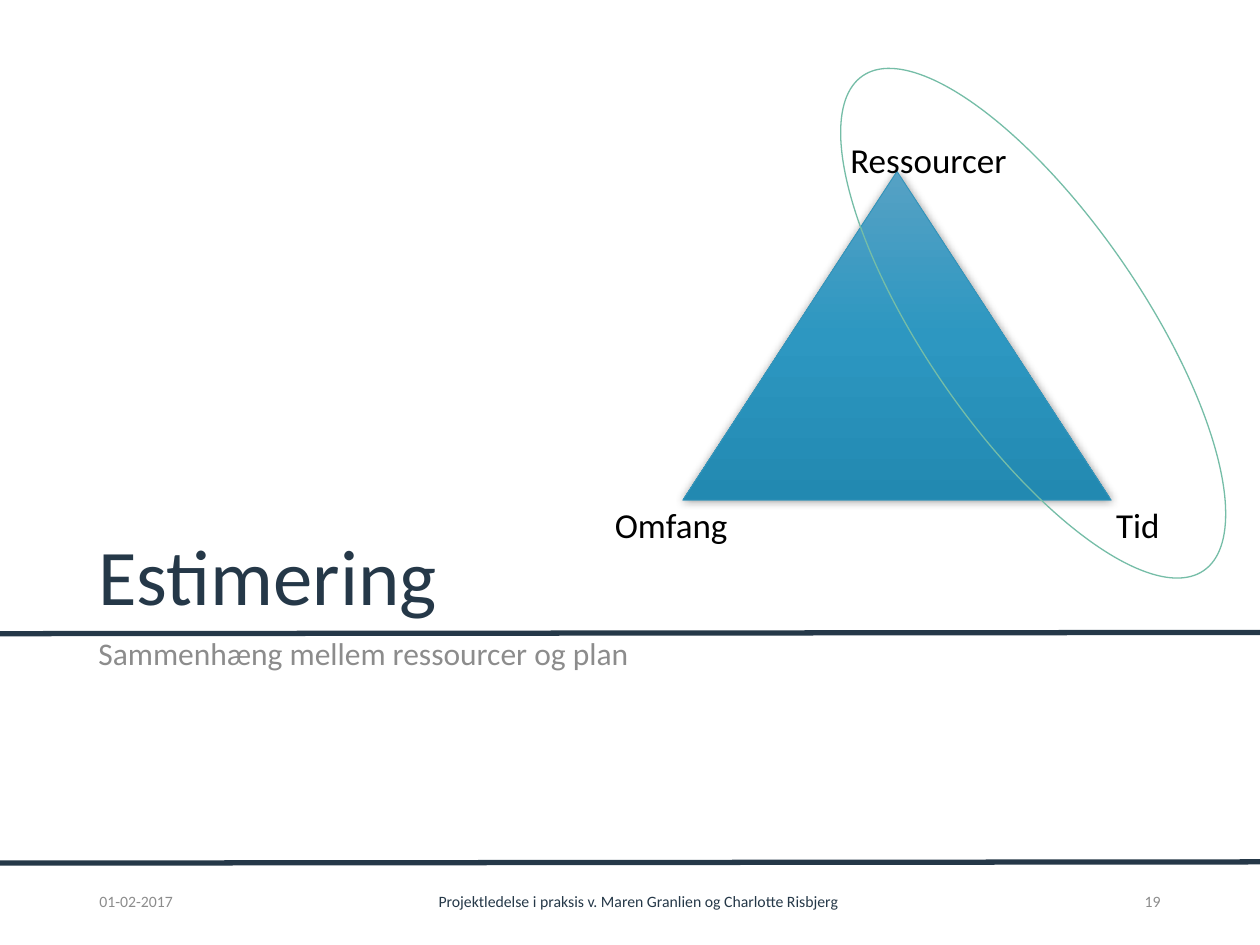
from lxml import etree
from pptx import Presentation
from pptx.dml.color import RGBColor
from pptx.enum.shapes import MSO_CONNECTOR, MSO_SHAPE
from pptx.enum.text import MSO_ANCHOR, PP_ALIGN
from pptx.oxml import parse_xml
from pptx.oxml.ns import nsdecls, qn
from pptx.util import Pt

LEFT, CENTER, RIGHT = PP_ALIGN.LEFT, PP_ALIGN.CENTER, PP_ALIGN.RIGHT
TOP, MIDDLE, BOTTOM = MSO_ANCHOR.TOP, MSO_ANCHOR.MIDDLE, MSO_ANCHOR.BOTTOM
STRAIGHT = MSO_CONNECTOR.STRAIGHT
TRIANGLE, OVAL = MSO_SHAPE.ISOSCELES_TRIANGLE, MSO_SHAPE.OVAL

FONT = "Calibri"
COLORS = {
    "navy": "253848", "grey": "8C8C8C", "black": "000000",
    "edge": "3494BA", "green": "75BDA7",
    "light": "56A1C4", "mid": "2D97C1", "deep": "2289B1",
}


def rgb(name):
    return RGBColor.from_string(COLORS[name])


def set_text(sp, text, size, color, align=LEFT, anchor=TOP):
    tf = sp.text_frame
    tf.text = text
    tf.vertical_anchor = anchor
    p = tf.paragraphs[0]
    p.alignment = align
    p.font.name, p.font.size, p.font.bold = FONT, Pt(size), False
    p.font.color.rgb = rgb(color)
    return p


def add_label(slide, box, text, size, color, align=LEFT, anchor=TOP, wrap=True):
    sp = slide.shapes.add_textbox(*map(Pt, box))
    sp.text_frame.word_wrap = wrap
    set_text(sp, text, size, color, align, anchor)


def add_rule(slide, y):
    """Full-width rule that rises slightly to the right."""
    line = slide.shapes.add_connector(STRAIGHT, 0, Pt(y), Pt(720), Pt(y - 0.7))
    line.line.color.rgb = rgb("navy")
    line.line.width = Pt(3)
    etree.SubElement(line._element.spPr, qn("a:effectLst"))


def add_headings(slide, box):
    """Title above the rule, subtitle below it."""
    x, y, w, h = box
    title_h = 224.6
    title, body = slide.shapes.title, slide.placeholders[1]
    title.left, title.top, title.width, title.height = map(Pt, (x, y, w, title_h))
    body_y = y + title_h + 2.2
    body.left, body.top, body.width, body.height = map(
        Pt, (x, body_y, w, y + h - body_y))

    p = set_text(title, "Estimering", 45, "navy", anchor=BOTTOM)
    p.line_spacing = 0.9
    # The layout sets its title in capitals
    p._p.find(".//" + qn("a:defRPr")).set("cap", "none")

    p = set_text(body, "Sammenhæng mellem ressourcer og plan", 18, "grey")
    p.line_spacing, p.space_before = 0.9, Pt(7.5)


def add_footer(slide, box):
    x, y, w, h = box
    parts = [
        (0, 71.3, "01-02-2017", "grey", LEFT),
        (77.7, 474.5, "Projektledelse i praksis v. Maren Granlien og Charlotte Risbjerg",
         "navy", CENTER),
        (w - 55.4, 55.4, "19", "grey", RIGHT),
    ]
    for dx, part_w, text, color, align in parts:
        add_label(slide, (x + dx, y, part_w, h), text, 9, color, align, MIDDLE)


def add_triangle(slide, box):
    """Shaded triangle with a name at each corner."""
    x, y, w, h = box
    sp = slide.shapes.add_shape(TRIANGLE, *map(Pt, box))
    stops = "".join(
        f'<a:gs pos="{pos}"><a:srgbClr val="{COLORS[name]}"/></a:gs>'
        for pos, name in ((0, "light"), (50000, "mid"), (100000, "deep")))
    sp._element.spPr.insert(2, parse_xml(
        f'<a:gradFill {nsdecls("a")} rotWithShape="1"><a:gsLst>{stops}</a:gsLst>'
        '<a:lin ang="5400000" scaled="0"/></a:gradFill>'))
    sp.line.color.rgb = rgb("edge")
    sp.line.width = Pt(0.5)
    sp.shadow.inherit = False
    sp._element.spPr.find(qn("a:effectLst")).append(parse_xml(
        f'<a:outerShdw {nsdecls("a")} blurRad="{Pt(5)}" dist="0" rotWithShape="0">'
        f'<a:srgbClr val="{COLORS["black"]}"><a:alpha val="40000"/></a:srgbClr>'
        '</a:outerShdw>'))

    base = y + h - 1.4
    corners = [
        (x + 88.6, y - 22.3, 105.1, "Ressourcer"),
        (x - 46, base, 79.9, "Omfang"),
        (x + w - 4.3, base, 39.6, "Tid"),
    ]
    for left, top, width, text in corners:
        add_label(slide, (left, top, width, 31.7), text, 20, "black", wrap=False)


def add_focus_ring(slide, box):
    sp = slide.shapes.add_shape(OVAL, *map(Pt, box))
    sp.rotation = 325.4
    sp.fill.background()
    sp.line.color.rgb = rgb("green")
    sp.line.width = Pt(0.75)
    sp.shadow.inherit = False


def main():
    prs = Presentation()
    prs.slide_width, prs.slide_height = Pt(720), Pt(540)
    slide = prs.slides.add_slide(prs.slide_layouts[2])

    for y in (493.2, 362.1):
        add_rule(slide, y)
    add_headings(slide, (49, 134.6, 620.6, 344.9))
    add_footer(slide, (49.7, 500.4, 620.6, 28.8))
    add_triangle(slide, (390.2, 97.9, 244.8, 187.9))
    add_focus_ring(slide, (528.5, 13, 123.8, 343.4))

    prs.save("out.pptx")


if __name__ == "__main__":
    main()
